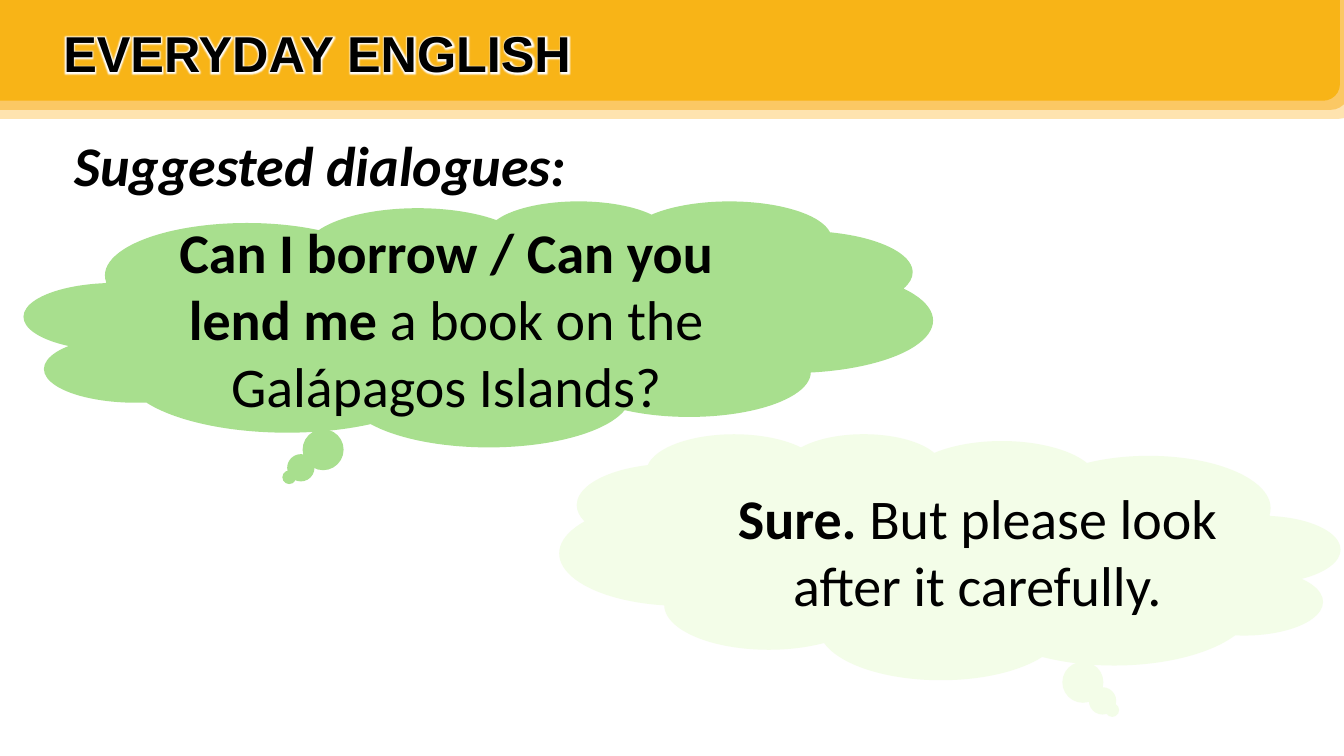
from lxml import etree
from pptx import Presentation
from pptx.dml.color import RGBColor
from pptx.enum.shapes import MSO_SHAPE
from pptx.enum.text import MSO_ANCHOR, PP_ALIGN
from pptx.oxml.ns import qn
from pptx.util import Inches, Pt

CLOUD = MSO_SHAPE.CLOUD_CALLOUT
BAND = MSO_SHAPE.ROUND_1_RECTANGLE
MIDDLE = MSO_ANCHOR.MIDDLE
CENTER = PP_ALIGN.CENTER

BLACK = RGBColor(0x00, 0x00, 0x00)
PALE_ORANGE = RGBColor(0xFE, 0xE3, 0xAF)
LIGHT_ORANGE = RGBColor(0xFB, 0xC8, 0x64)
ORANGE = RGBColor(0xF8, 0xB4, 0x17)
GREEN = RGBColor(0xA8, 0xDF, 0x8E)
PALE_GREEN = RGBColor(0xF3, 0xFD, 0xE8)

TITLE = "EVERYDAY ENGLISH"
HEADING = "Suggested dialogues:"
DIALOGUE = [
    ("Can I borrow / Can you lend me ", "a book on the Galápagos Islands?",
     (0.24, 1.99, 9.01, 2.44), GREEN, None),
    ("Sure.", " But please look after it carefully.",
     (5.55, 4.3, 7.74, 2.44), PALE_GREEN, "flipH"),
]
BAND_COLORS = [PALE_ORANGE, LIGHT_ORANGE, ORANGE]
BAND_WIDTH, BAND_HEIGHT, BAND_STEP = 13.29, 1.0, 0.09

deck = Presentation()
deck.slide_width, deck.slide_height = Inches(13.33), Inches(7.5)
slide = deck.slides.add_slide(deck.slide_layouts[6])


def add_filled(preset, box, color, flip):
    shape = slide.shapes.add_shape(preset, *map(Inches, box))
    shape.shadow.inherit = False
    shape.fill.solid()
    shape.fill.fore_color.rgb = color
    shape.line.fill.background()
    if flip:
        shape._element.spPr.find(qn("a:xfrm")).set(flip, "1")
    return shape


def add_words(paragraph, words, size=40, face="Calibri", bold=True, italic=False):
    run = paragraph.add_run()
    run.text = words
    font = run.font
    font.size, font.name, font.bold, font.italic = Pt(size), face, bold, italic
    font.color.rgb = BLACK
    return run


def add_label(words, box, **style):
    label = slide.shapes.add_textbox(*map(Inches, box))
    label.text_frame.word_wrap = True
    return add_words(label.text_frame.paragraphs[0], words, **style)


def add_white_glow(run):
    effects = etree.Element(qn("a:effectLst"))
    glow = etree.SubElement(effects, qn("a:glow"), rad=str(Pt(5)))
    etree.SubElement(glow, qn("a:srgbClr"), val="FFFFFF")
    run.font._element.find(qn("a:solidFill")).addnext(effects)


add_label(HEADING, (0.64, 1.25, 5.56, 0.77), italic=True)

for strong, plain, box, color, flip in DIALOGUE:
    frame = add_filled(CLOUD, box, color, flip).text_frame
    frame.word_wrap = True
    frame.vertical_anchor = MIDDLE
    line = frame.paragraphs[0]
    line.alignment = CENTER
    add_words(line, strong)
    add_words(line, plain, bold=False)

for index, color in enumerate(BAND_COLORS):
    extra = BAND_STEP * (len(BAND_COLORS) - 1 - index)
    add_filled(BAND, (0, 0, BAND_WIDTH + extra, BAND_HEIGHT + extra), color, "flipV")

add_white_glow(add_label(TITLE, (0.53, 0.17, 5.24, 0.71), size=36, face="Arial"))

deck.save("out.pptx")
